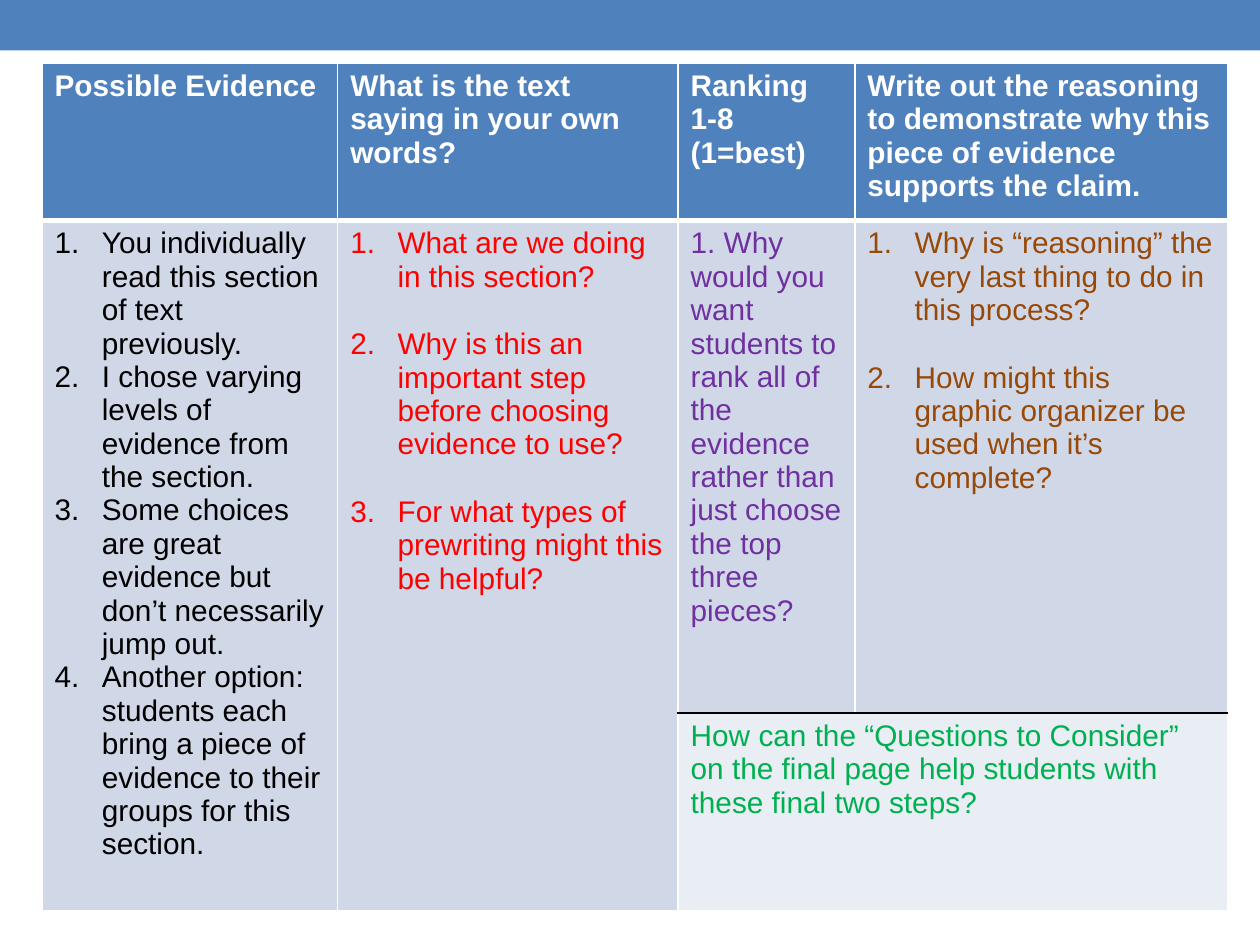
from dataclasses import dataclass
from typing import NamedTuple

from lxml.etree import SubElement
from pptx import Presentation
from pptx.dml.color import RGBColor as Rgb
from pptx.enum.shapes import MSO_SHAPE as Shape
from pptx.oxml.ns import qn
from pptx.util import Pt


@dataclass(frozen=True)
class Theme:
    """Colours, type and line widths of the slide."""
    blue: str = "4F81BD"
    pale: str = "D0D8E8"
    paler: str = "E9EDF4"
    white: str = "FFFFFF"
    black: str = "000000"
    red: str = "FF0000"
    purple: str = "7030A0"
    brown: str = "984807"
    green: str = "00B050"
    font: str = "Arial"
    size: float = 17
    thin: float = 1
    thick: float = 3
    indent: float = 27
    gap: float = 19.5


class Box(NamedTuple):
    """A region in points."""
    left: float
    top: float
    width: float
    height: float


THEME = Theme()
COLUMNS = [169, 194.5, 101, 213]
ROWS = [90, 281.5, 113]
HEADINGS = [
    ["Possible Evidence"],
    ["What is the text saying in your own words?"],
    ["Ranking 1-8", "(1=best)"],
    ["Write out the reasoning to demonstrate why this piece of evidence supports the claim."],
]
EVIDENCE = [
    "You individually read this section of text previously.",
    "I chose varying levels of evidence from the section.",
    "Some choices are great evidence but don’t necessarily jump out.",
    "Another option: students each bring a piece of evidence to their groups for this section.",
]
MEANING = [
    "What are we doing in this section?",
    "Why is this an important step before choosing evidence to use?",
    "For what types of prewriting might this be helpful?",
]
RANKING = [
    "1. Why would you want students to rank all of the evidence "
    "rather than just choose the top three pieces?",
]
REASONING = [
    "Why is “reasoning” the very last thing to do in this process?",
    "How might this graphic organizer be used when it’s complete?",
]
CONSIDER = [
    "How can the “Questions to Consider” on the final page help students "
    "with these final two steps?",
]


def set_all(target, values):
    """Set each named attribute of the target."""
    for name, value in values.items():
        setattr(target, name, value)


def number_para(para):
    """Give a paragraph an automatic number and a hanging indent."""
    props = para._p.get_or_add_pPr()
    props.set("marL", str(Pt(THEME.indent)))
    props.set("indent", str(-Pt(THEME.indent)))
    SubElement(props, qn("a:buFont"), typeface="+mj-lt")
    SubElement(props, qn("a:buAutoNum"), type="arabicPeriod")


def border_cell(cell, top, bottom):
    """Draw the four borders; top and bottom are (colour, width) pairs."""
    side = (THEME.white, THEME.thin)
    props = cell._tc.get_or_add_tcPr()
    for tag, (color, width) in zip(("lnL", "lnR", "lnT", "lnB"), (side, side, top, bottom)):
        line = SubElement(props, qn(f"a:{tag}"), w=str(Pt(width)))
        fill = SubElement(line, qn("a:solidFill"))
        SubElement(fill, qn("a:srgbClr"), val=color)


def fill_cell(cell, color):
    """Paint a cell in one colour."""
    cell.fill.solid()
    cell.fill.fore_color.rgb = Rgb.from_string(color)


def write_cell(cell, lines, color, bold=False, numbered=False, gap=0):
    """Write one paragraph per line."""
    frame = cell.text_frame
    for index, text in enumerate(lines):
        para = frame.paragraphs[0] if index == 0 else frame.add_paragraph()
        if index and gap:
            para.space_before = Pt(gap)
        if numbered:
            number_para(para)
        span = para.add_run()
        span.text = text
        set_all(span.font, {"name": THEME.font, "size": Pt(THEME.size), "bold": bold})
        span.font.color.rgb = Rgb.from_string(color)


def add_banner(page, box):
    """Add the plain band across the top."""
    band = page.shapes.add_shape(Shape.RECTANGLE, *map(Pt, box))
    band.shadow.inherit = False
    band.fill.solid()
    band.fill.fore_color.rgb = Rgb.from_string(THEME.blue)
    band.line.fill.background()


def style_grid(table):
    """Give every cell its borders and fill."""
    white, heavy, dark = (
        (THEME.white, THEME.thin), (THEME.white, THEME.thick), (THEME.black, THEME.thin))
    fills = (THEME.blue, THEME.pale, THEME.paler)
    for row in range(len(ROWS)):
        for column in range(len(COLUMNS)):
            cell = table.cell(row, column)
            middle = dark if column >= 2 else white
            edges = (white, heavy, middle, white)
            border_cell(cell, edges[row], edges[row + 1])
            fill_cell(cell, THEME.pale if row and column < 2 else fills[row])


def add_organizer(page, box):
    """Add the evidence table, scaled to its box."""
    table = page.shapes.add_table(len(ROWS), len(COLUMNS), *map(Pt, box)).table
    for column, width in zip(table.columns, COLUMNS):
        column.width = Pt(width * box.width / sum(COLUMNS))
    for row, height in zip(table.rows, ROWS):
        row.height = Pt(height * box.height / sum(ROWS))
    style_grid(table)
    for column in (0, 1):
        table.cell(1, column).merge(table.cell(2, column))
    table.cell(2, 2).merge(table.cell(2, 3))

    for column, lines in enumerate(HEADINGS):
        write_cell(table.cell(0, column), lines, THEME.white, bold=True)
    write_cell(table.cell(1, 0), EVIDENCE, THEME.black, numbered=True)
    write_cell(table.cell(1, 1), MEANING, THEME.red, numbered=True, gap=THEME.gap)
    write_cell(table.cell(1, 2), RANKING, THEME.purple)
    write_cell(table.cell(1, 3), REASONING, THEME.brown, numbered=True, gap=THEME.gap)
    write_cell(table.cell(2, 2), CONSIDER, THEME.green)


def main():
    """Build and save the slide."""
    deck = Presentation()
    set_all(deck, {"slide_width": Pt(720), "slide_height": Pt(540)})
    page = deck.slides.add_slide(deck.slide_layouts[6])
    add_banner(page, Box(0, 0, 720, 28.8))
    add_organizer(page, Box(24, 36, sum(COLUMNS), sum(ROWS)))
    deck.save("out.pptx")


if __name__ == "__main__":
    main()
